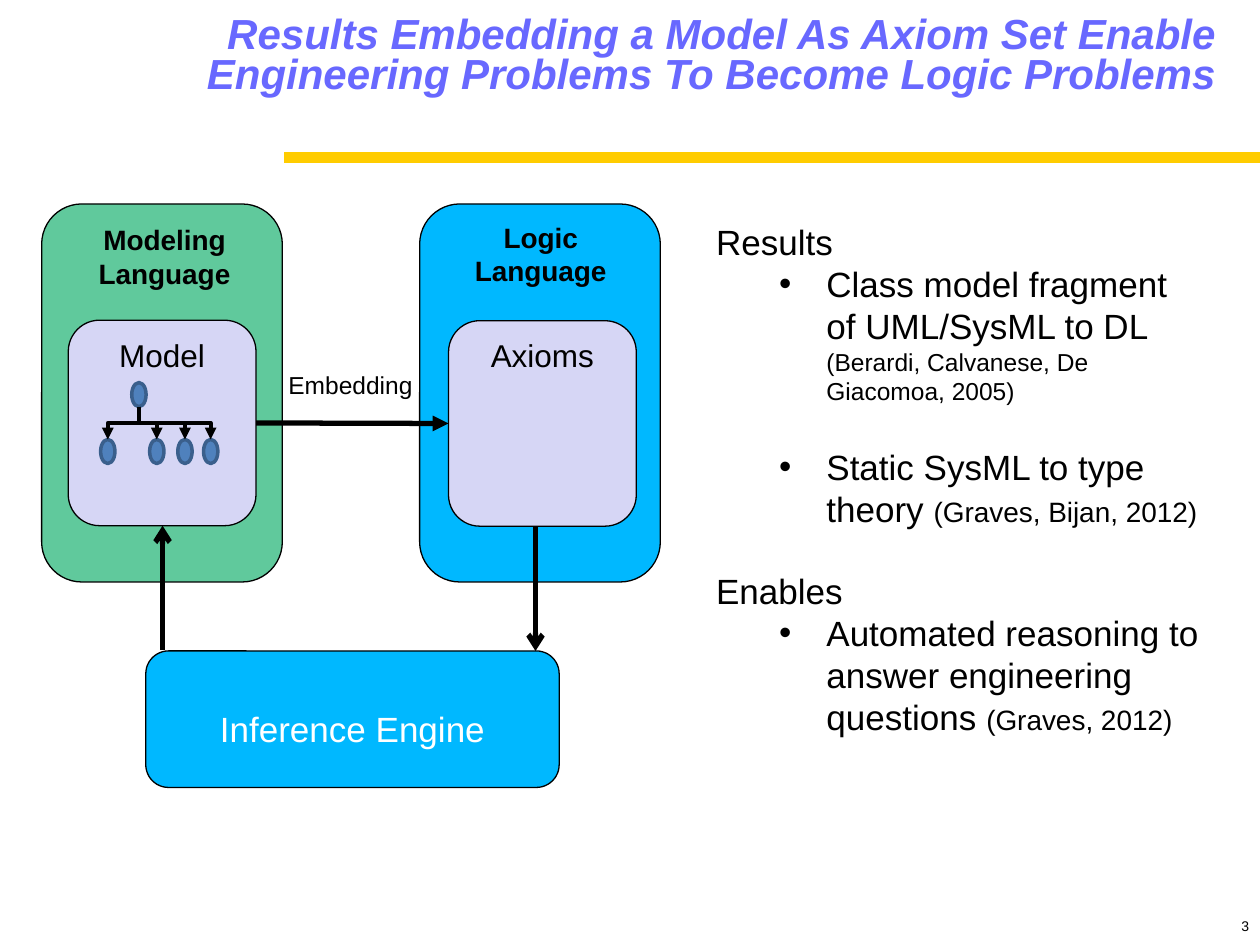
from lxml import etree
from pptx import Presentation
from pptx.dml.color import RGBColor
from pptx.enum.shapes import MSO_CONNECTOR, MSO_SHAPE
from pptx.enum.text import MSO_ANCHOR, MSO_AUTO_SIZE, PP_ALIGN
from pptx.oxml.ns import qn
from pptx.util import Pt

ROUNDED, OVAL = MSO_SHAPE.ROUNDED_RECTANGLE, MSO_SHAPE.OVAL
STRAIGHT, ELBOW = MSO_CONNECTOR.STRAIGHT, MSO_CONNECTOR.ELBOW
LEFT, CENTER, RIGHT = PP_ALIGN.LEFT, PP_ALIGN.CENTER, PP_ALIGN.RIGHT
TOP, MIDDLE, BOTTOM = MSO_ANCHOR.TOP, MSO_ANCHOR.MIDDLE, MSO_ANCHOR.BOTTOM

FONT = "Arial"
COLORS = {
    "title": "6868FF", "rule": "FFCC00", "black": "000000", "white": "FFFFFF",
    "logic": "00B8FF", "modeling": "60C99C", "inner": "D6D6F5",
    "node": "4F81BD", "node_line": "3A5F8C",
}

TITLE = ("Results Embedding a Model As Axiom Set Enable "
         "Engineering Problems To Become Logic Problems")
# level, space after, runs of (text, size)
BODY = [
    (0, 0, [("Results", 20)]),
    (1, 23, [("Class model fragment of UML/SysML to DL ", 20),
             ("(Berardi, Calvanese, De Giacomoa, 2005)", 14)]),
    (1, 23, [("Static SysML to type theory ", 20), ("(Graves, Bijan, 2012)", 16)]),
    (0, 0, [("Enables", 20)]),
    (1, 0, [("Automated reasoning to answer engineering questions ", 20),
            ("(Graves, 2012)", 16)]),
]
# name, box, fill, text, size, text color
BLOCKS = [
    ("Logic Language", (239.8, 116.6, 137.5, 216), "logic", "", 18, "black"),
    ("Modeling Language", (23.8, 116.6, 137.5, 216), "modeling", "", 18, "black"),
    ("Model", (39, 183, 107.3, 117.4), "inner", "Model", 18, "black"),
    ("Axioms", (256.3, 183.3, 107.3, 117.4), "inner", "Axioms", 18, "black"),
    ("Inference Engine", (83.3, 372, 236.2, 78), "logic", "Inference Engine", 20, "white"),
]
# text, box, size, bold, alignment, wrap
LABELS = [
    ("Logic\nLanguage", (264, 122.4, 90, 46), 16, True, CENTER, True),
    ("Modeling Language", (49, 123.8, 90, 46), 16, True, CENTER, True),
    ("Embedding", (157.7, 208, 90, 24.5), 14, False, LEFT, False),
]
ROOT_NODE = (79.4, 225.5)
CHILD_CENTERS = (61.6, 89.6, 105.7, 120.4)
CHILD_CENTER_Y = 258
NODE_WIDTH, NODE_HEIGHT = 8.2, 13.8


def color(name):
    return RGBColor.from_string(COLORS[name])


def place(shape, box):
    shape.left, shape.top, shape.width, shape.height = map(Pt, box)


def style_text(paragraph, size, color_name, alignment, bold=False, italic=False):
    paragraph.alignment = alignment
    for run in paragraph.runs:
        font = run.font
        font.name, font.size, font.bold, font.italic = FONT, Pt(size), bold, italic
        font.color.rgb = color(color_name)


def add_block(slide, preset, box, fill, line="black", width=0.75):
    shape = slide.shapes.add_shape(preset, *map(Pt, box))
    shape.shadow.inherit = False
    shape.fill.solid()
    shape.fill.fore_color.rgb = color(fill)
    shape.line.color.rgb = color(line)
    shape.line.width = Pt(width)
    return shape


def add_label(slide, text, box, size, bold, alignment, wrap):
    label = slide.shapes.add_textbox(*map(Pt, box))
    frame = label.text_frame
    frame.word_wrap = wrap
    frame.text = text
    for paragraph in frame.paragraphs:
        style_text(paragraph, size, "black", alignment, bold)
    return label


def add_line(slide, kind, start, end, width, head=None, color_name="black"):
    line = slide.shapes.add_connector(kind, *map(Pt, start + end))
    line.line.color.rgb = color(color_name)
    line.line.width = Pt(width)
    if head:
        etree.SubElement(line.line._get_or_add_ln(), qn("a:tailEnd"), type=head)
    etree.SubElement(line._element.spPr, qn("a:effectLst"))
    return line


def add_branch(slide, start, end):
    """Elbow that leaves downward: a sideways elbow turned by a quarter."""
    (x1, y1), (x2, y2) = start, end
    center_x, center_y = (x1 + x2) / 2, (y1 + y2) / 2
    rightward = x2 > x1
    half_width = (y2 - y1) / 2 * (-1 if rightward else 1)
    half_height = abs(x2 - x1) / 2
    branch = add_line(slide, ELBOW,
                      (center_x - half_width, center_y - half_height),
                      (center_x + half_width, center_y + half_height), 2.25, "triangle")
    degrees = 270 if rightward else 90
    branch._element.spPr.find(qn("a:xfrm")).set("rot", str(degrees * 60000))


def add_node(slide, center_x, center_y):
    box = (center_x - NODE_WIDTH / 2, center_y - NODE_HEIGHT / 2, NODE_WIDTH, NODE_HEIGHT)
    add_block(slide, OVAL, box, "node", "node_line", 2)


def set_bullet(paragraph, level):
    properties = paragraph._p.get_or_add_pPr()
    properties.set("marL", str(Pt(63) if level else 0))
    properties.set("indent", str(Pt(-27) if level else 0))
    if level:
        etree.SubElement(properties, qn("a:buFont"), typeface=FONT)
        etree.SubElement(properties, qn("a:buChar"), char="•")
    else:
        etree.SubElement(properties, qn("a:buNone"))


def fill_title(title):
    place(title, (106, 6, 596, 78))
    frame = title.text_frame
    frame.text = TITLE
    frame.auto_size = MSO_AUTO_SIZE.NONE
    frame.vertical_anchor = TOP
    paragraph = frame.paragraphs[0]
    paragraph.line_spacing = 0.8
    style_text(paragraph, 24, "title", RIGHT, bold=True, italic=True)


def fill_body(body):
    place(body, (402, 122.4, 293.8, 360))
    frame = body.text_frame
    frame.auto_size = MSO_AUTO_SIZE.NONE
    frame.vertical_anchor = TOP
    frame.text = "\n".join("" for _ in BODY)
    for paragraph, (level, space_after, runs) in zip(frame.paragraphs, BODY):
        paragraph.level = level
        paragraph.space_before, paragraph.space_after = Pt(0), Pt(space_after)
        for text, size in runs:
            run = paragraph.add_run()
            run.text = text
        style_text(paragraph, 20, "black", LEFT)
        for run, (_, size) in zip(paragraph.runs, runs):
            run.font.size = Pt(size)
        set_bullet(paragraph, level)


def main():
    presentation = Presentation()
    presentation.slide_width, presentation.slide_height = Pt(720), Pt(540)
    slide = presentation.slides.add_slide(presentation.slide_layouts[1])
    fill_title(slide.shapes.title)
    fill_body(slide.placeholders[1])
    add_line(slide, STRAIGHT, (720, 90), (162, 90), 6, color_name="rule")

    blocks = {}
    for name, box, fill, text, size, text_color in BLOCKS:
        block = blocks[name] = add_block(slide, ROUNDED, box, fill)
        if text:
            block.text_frame.text = text
            block.text_frame.vertical_anchor = TOP
            style_text(block.text_frame.paragraphs[0], size, text_color, CENTER)
    engine_frame = blocks["Inference Engine"].text_frame
    engine_frame.vertical_anchor = MIDDLE
    engine_frame.margin_top = Pt(14)

    for label in LABELS:
        add_label(slide, *label)

    root_x, root_y = ROOT_NODE
    add_node(slide, root_x, root_y)
    for child_x in CHILD_CENTERS:
        add_node(slide, child_x, CHILD_CENTER_Y)
        add_branch(slide, (root_x, root_y + NODE_HEIGHT / 2),
                   (child_x, CHILD_CENTER_Y - NODE_HEIGHT / 2))

    embedding = add_line(slide, STRAIGHT, (146.3, 241.7), (256.3, 242), 3, "triangle")
    embedding.begin_connect(blocks["Model"], 3)
    embedding.end_connect(blocks["Axioms"], 1)
    add_line(slide, STRAIGHT, (306, 300.7), (306, 372), 3, "arrow")
    add_line(slide, STRAIGHT, (92.9, 371.5), (92.9, 300.4), 3, "arrow")

    number = add_label(slide, "3", (690, 516, 23.8, 18), 8, False, RIGHT, True)
    frame = number.text_frame
    frame.vertical_anchor = BOTTOM
    frame.margin_left = frame.margin_right = frame.margin_top = frame.margin_bottom = 0
    presentation.save("out.pptx")


if __name__ == "__main__":
    main()
